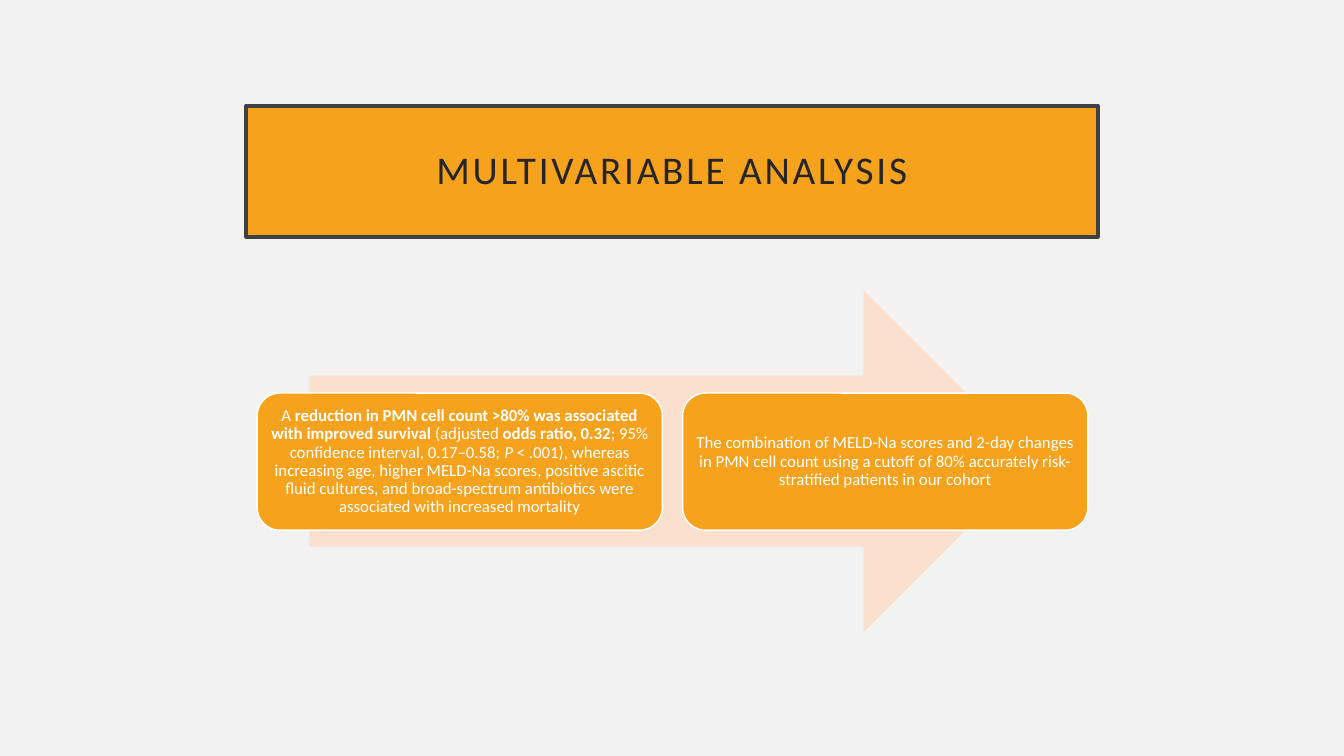
"""Build the multivariable analysis slide: a title bar and two findings on an arrow."""
from dataclasses import dataclass

from pptx import Presentation
from pptx import util as u
from pptx.dml.color import RGBColor
from pptx.enum import shapes, text

COLOURS = {
    "background": "F2F2F2",
    "orange": "F6A21D",
    "peach": "FBE0CD",
    "border": "404040",
    "heading": "262626",
    "white": "FFFFFF",
}
FONT = "Calibri"
FINDING_LEFT, FINDING_TOP = 2.55, 3.9
FINDING_WIDTH, FINDING_HEIGHT = 4.02, 1.36
FINDING_PITCH = 4.22


@dataclass(frozen=True)
class Phrase:
    """A stretch of wording with one emphasis."""

    wording: str
    bold: bool = False
    italic: bool = False


FINDINGS = [
    [
        Phrase("A "),
        Phrase("reduction in PMN cell count >80% was associated with improved survival ", bold=True),
        Phrase("(adjusted "),
        Phrase("odds ratio, 0.32", bold=True),
        Phrase("; 95% confidence interval, 0.17–0.58; "),
        Phrase("P", italic=True),
        Phrase(
            " < .001), whereas increasing age, higher MELD-Na scores, positive ascitic fluid "
            "cultures, and broad-spectrum antibiotics were associated with increased mortality"
        ),
    ],
    [
        Phrase(
            "The combination of MELD-Na scores and 2-day changes in PMN cell count using "
            "a cutoff of 80% accurately risk-stratified patients in our cohort"
        )
    ],
]


def colour(name: str) -> RGBColor:
    """Look up a named colour."""
    return RGBColor.from_string(COLOURS[name])


def paint(shape, fill: str, line: str | None = None, weight: float = 1) -> None:
    """Give a shape its fill and its outline, if any."""
    shape.fill.solid()
    shape.fill.fore_color.rgb = colour(fill)
    if line is None:
        shape.line.fill.background()
    else:
        shape.line.color.rgb = colour(line)
        shape.line.width = u.Pt(weight)


def write(shape, phrases: list[Phrase], size: float, ink: str, inset: float) -> None:
    """Fill a shape with one centred paragraph."""
    frame = shape.text_frame
    frame.word_wrap = True
    frame.auto_size = text.MSO_AUTO_SIZE.NONE
    frame.vertical_anchor = text.MSO_ANCHOR.MIDDLE
    frame.margin_left = frame.margin_right = u.Inches(inset)
    frame.margin_top = frame.margin_bottom = u.Inches(inset)
    paragraph = frame.paragraphs[0]
    paragraph.alignment = text.PP_ALIGN.CENTER
    paragraph.line_spacing = 0.9
    paragraph.font.name = FONT
    paragraph.font.size = u.Pt(size)
    paragraph.font.color.rgb = colour(ink)
    for phrase in phrases:
        run = paragraph.add_run()
        run.text = phrase.wording
        run.font.bold = phrase.bold
        run.font.italic = phrase.italic


def add_heading(slide) -> None:
    """Place the title in its bordered bar with wide letter spacing."""
    heading = slide.shapes.title
    heading.left, heading.top = u.Inches(2.44), u.Inches(1.05)
    heading.width, heading.height = u.Inches(8.45), u.Inches(1.3)
    paint(heading, "orange", "border", 2.5)
    write(heading, [Phrase("MULTIVARIABLE ANALYSIS")], 28, "heading", 0.2)
    heading.text_frame.paragraphs[0].runs[0].font._element.set("spc", "200")


def add_arrow(slide) -> None:
    """Draw the pale arrow behind the findings."""
    arrow = slide.shapes.add_shape(
        shapes.MSO_SHAPE.RIGHT_ARROW,
        u.Inches(3.07), u.Inches(2.88), u.Inches(7.19), u.Inches(3.39),
    )
    arrow.shadow.inherit = False
    paint(arrow, "peach")


def add_finding(slide, index: int, phrases: list[Phrase]) -> None:
    """Draw one rounded box with its finding."""
    finding = slide.shapes.add_shape(
        shapes.MSO_SHAPE.ROUNDED_RECTANGLE,
        u.Inches(FINDING_LEFT + index * FINDING_PITCH), u.Inches(FINDING_TOP),
        u.Inches(FINDING_WIDTH), u.Inches(FINDING_HEIGHT),
    )
    finding.shadow.inherit = False
    paint(finding, "orange", "white")
    write(finding, phrases, 12, "white", 0.05)


def main() -> None:
    """Build and save the presentation."""
    deck = Presentation()
    deck.slide_width, deck.slide_height = u.Inches(13.33), u.Inches(7.5)
    slide = deck.slides.add_slide(deck.slide_layouts[5])
    slide.background.fill.solid()
    slide.background.fill.fore_color.rgb = colour("background")
    add_heading(slide)
    add_arrow(slide)
    for index, phrases in enumerate(FINDINGS):
        add_finding(slide, index, phrases)
    deck.save("out.pptx")


if __name__ == "__main__":
    main()
